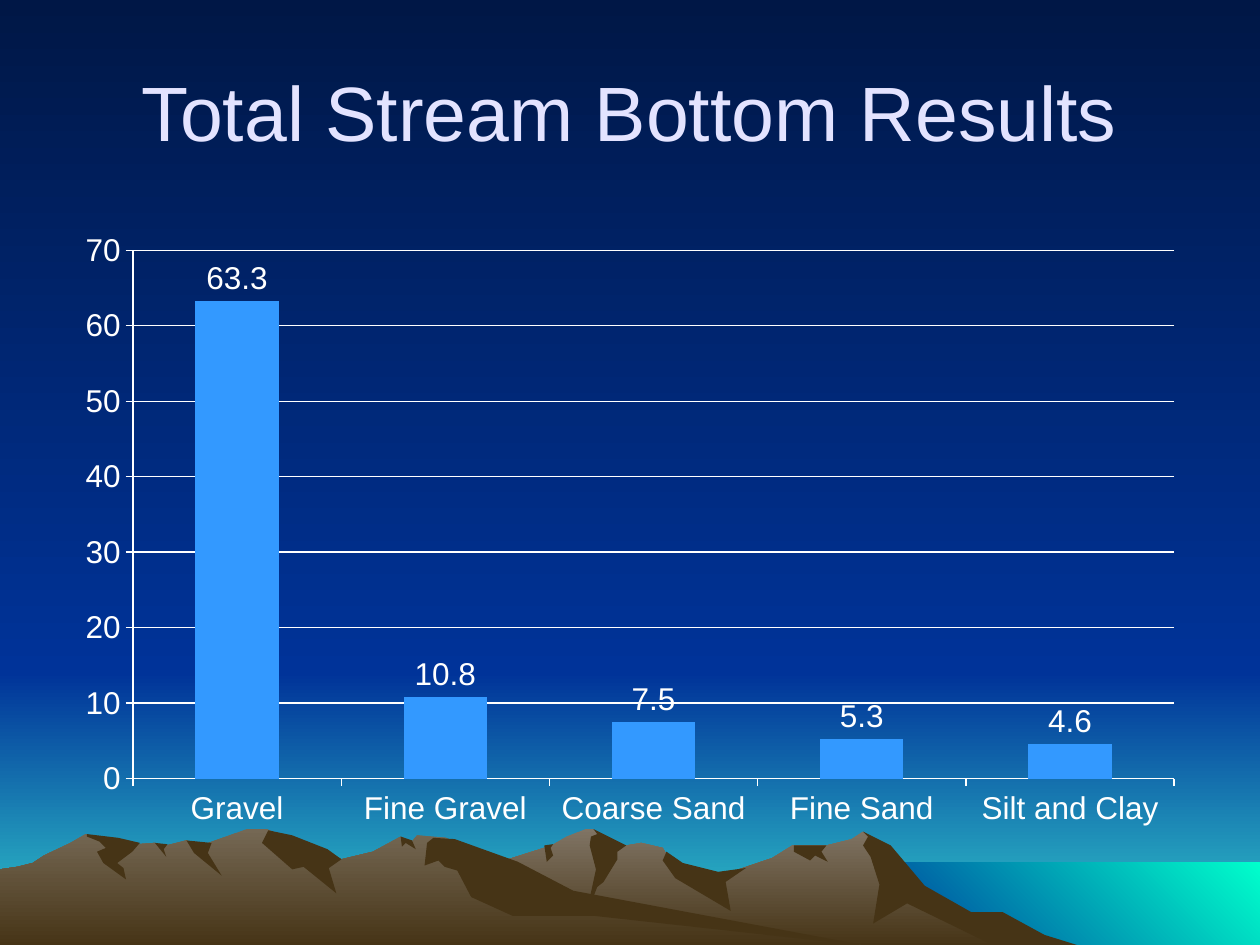
from lxml import etree
from pptx import Presentation
from pptx.chart.data import CategoryChartData
from pptx.dml.color import RGBColor
from pptx.enum.chart import XL_CHART_TYPE, XL_LABEL_POSITION, XL_TICK_MARK
from pptx.enum.shapes import MSO_SHAPE
from pptx.enum.text import MSO_ANCHOR, PP_ALIGN
from pptx.oxml.ns import qn
from pptx.util import Pt

RECTANGLE = MSO_SHAPE.RECTANGLE
COLUMNS = XL_CHART_TYPE.COLUMN_CLUSTERED
OUTSIDE_END = XL_LABEL_POSITION.OUTSIDE_END
TICK_OUTSIDE = XL_TICK_MARK.OUTSIDE
MIDDLE = MSO_ANCHOR.MIDDLE
CENTER = PP_ALIGN.CENTER

NIGHT = RGBColor(0x00, 0x17, 0x46)
BLUE = RGBColor(0x00, 0x33, 0x99)
TURQUOISE = RGBColor(0x33, 0xCC, 0xCC)
AQUA = RGBColor(0x00, 0xFF, 0xCC)
BROWN = RGBColor(0x46, 0x34, 0x16)
ROCK_RIGHT = RGBColor(0x80, 0x74, 0x64)
ROCK_LEFT = RGBColor(0x75, 0x68, 0x54)
LAVENDER = RGBColor(0xE3, 0xE3, 0xFF)
BAR_BLUE = RGBColor(0x33, 0x99, 0xFF)
WHITE = RGBColor(0xFF, 0xFF, 0xFF)

FONT = "Arial"
DOWN, UP_RIGHT = 270, 45  # gradient directions, in degrees

PAGE_WIDTH, PAGE_HEIGHT = 720, 540
HORIZON = 384
SEA_LEFT, SEA_TOP = 492, 493
MARGIN = 36
CONTENT_WIDTH = PAGE_WIDTH - 2 * MARGIN
CHART_TOP, CHART_HEIGHT = 126, 354
PLOT_LEFT, PLOT_TOP, PLOT_WIDTH, PLOT_HEIGHT = 76, 143, 595, 302

# Mountain points are (x, y) in hundredths of an inch.
MOUNTAIN_UNIT = Pt(0.72)
MOUNTAIN_FOOT = 751


def fill_gradient(fill, first, last, angle):
    fill.gradient()
    fill.gradient_angle = angle
    for stop, color in zip(fill.gradient_stops, (first, last)):
        stop.color.rgb = color


def add_mountain_face(shapes, points):
    """Add a closed outline without line or shadow and return its fill."""
    builder = shapes.build_freeform(*points[0], scale=MOUNTAIN_UNIT)
    builder.add_line_segments(points[1:], close=True)
    face = builder.convert_to_shape()
    face.shadow.inherit = False
    face.line.fill.background()
    return face.fill


deck = Presentation()
deck.slide_width, deck.slide_height = Pt(PAGE_WIDTH), Pt(PAGE_HEIGHT)
page = deck.slides.add_slide(deck.slide_layouts[5])
shapes = page.shapes
fill_gradient(page.background.fill, NIGHT, BLUE, DOWN)

# Sky and sea: each band reaches the right edge of the page
for left, top, bottom, first, last, angle in (
    (0, HORIZON, PAGE_HEIGHT, BLUE, TURQUOISE, DOWN),
    (0, 0, HORIZON, NIGHT, BLUE, DOWN),
    (SEA_LEFT, SEA_TOP, PAGE_HEIGHT, BLUE, AQUA, UP_RIGHT),
):
    band = shapes.add_shape(
        RECTANGLE, Pt(left), Pt(top), Pt(PAGE_WIDTH - left), Pt(bottom - top)
    )
    band.shadow.inherit = False
    band.line.fill.background()
    fill_gradient(band.fill, first, last, angle)

# Mountains: a skyline runs from left to right and is closed along the foot;
# the shadows are dark faces hanging from its peaks.
right_skyline = [
    (277, 739), (327, 709), (394, 685), (438, 671), (450, 664), (465, 658),
    (471, 658), (486, 673), (509, 669), (526, 673), (536, 690), (566, 697),
    (613, 681), (629, 671), (656, 671), (676, 666), (685, 660), (702, 671),
    (723, 698), (764, 723), (778, 727), (802, 740),
]
right_shadows = {
    "east slope": [
        (685, 660), (707, 671), (734, 703), (771, 724), (796, 724), (829, 742),
        (858, 751), (792, 752), (720, 717), (693, 733), (698, 702), (691, 680),
        (685, 671), (689, 664)],
    "middle peak": [
        (471, 658), (497, 671), (490, 676), (490, 682), (479, 700), (474, 704),
        (465, 727), (473, 690), (468, 671), (469, 664), (474, 662)],
    "middle shoulder": [
        (529, 676), (542, 685), (570, 692), (592, 689), (576, 700), (580, 723),
        (536, 697), (526, 683)],
    "east notch": [
        (630, 671), (656, 671), (652, 676), (657, 684), (647, 679), (643, 683),
        (630, 676)],
    "west notch": [
        (432, 671), (439, 670), (437, 673), (439, 679), (434, 684)],
}
left_skyline = [
    (0, 690), (14, 688), (26, 685), (35, 679), (56, 669), (68, 662),
    (94, 671), (123, 669), (132, 671), (148, 667), (160, 671), (196, 658),
    (212, 658), (223, 663), (236, 681), (260, 676), (271, 682), (296, 676),
    (318, 664), (327, 668), (331, 663), (354, 665), (432, 712), (667, 748),
]
left_shadows = {
    "main peak": [
        (213, 659), (232, 663), (260, 674), (271, 682), (261, 689), (267, 709),
        (241, 688), (232, 690), (208, 669)],
    "long east slope": [
        (344, 665), (361, 666), (411, 684), (455, 707), (690, 751), (472, 727),
        (407, 727), (374, 712), (363, 691), (353, 688), (348, 683), (337, 687),
        (339, 669)],
    "east notch": [
        (318, 664), (327, 667), (330, 674), (322, 669), (319, 672)],
    "middle gully": [
        (148, 667), (168, 669), (165, 677), (176, 695), (154, 677)],
    "small notch": [
        (123, 669), (133, 670), (130, 674), (132, 680)],
    "west peak": [
        (69, 662), (94, 665), (111, 669), (105, 676), (93, 685), (98, 689),
        (100, 698), (82, 685), (77, 676), (84, 673), (79, 668), (69, 664)],
}
for skyline, foot_left, foot_right, rock, shadows in (
    (right_skyline, 258, 821, ROCK_RIGHT, right_shadows),
    (left_skyline, 0, 690, ROCK_LEFT, left_shadows),
):
    foot = [(foot_right, MOUNTAIN_FOOT), (foot_left, MOUNTAIN_FOOT)]
    fill_gradient(add_mountain_face(shapes, skyline + foot), rock, BROWN, DOWN)
    for points in shadows.values():
        shadow_fill = add_mountain_face(shapes, points)
        shadow_fill.solid()
        shadow_fill.fore_color.rgb = BROWN

# Title, brought in front of the landscape
title = shapes.title
shapes._spTree.append(title._element)
title.left, title.top = Pt(MARGIN), Pt(18)
title.width, title.height = Pt(CONTENT_WIDTH), Pt(90)
title.text_frame.vertical_anchor = MIDDLE
para = title.text_frame.paragraphs[0]
para.alignment = CENTER
span = para.add_run()
span.text = "Total Stream Bottom Results"
span.font.name = FONT
span.font.size = Pt(44)
span.font.color.rgb = LAVENDER

# Chart
data = CategoryChartData(number_format="0.0")
data.categories = ["Gravel", "Fine Gravel", "Coarse Sand", "Fine Sand", "Silt and Clay"]
data.add_series("Series 1", (63.3, 10.8, 7.5, 5.3, 4.6))
chart = shapes.add_chart(
    COLUMNS, Pt(MARGIN), Pt(CHART_TOP), Pt(CONTENT_WIDTH), Pt(CHART_HEIGHT), data
).chart
chart.has_title = chart.has_legend = False
chart.font.name = FONT
chart.font.size = Pt(18)
chart.font.color.rgb = WHITE

value_axis = chart.value_axis
value_axis.minimum_scale, value_axis.maximum_scale = 0, 70
value_axis.major_unit = 10
value_axis.has_major_gridlines = True
value_axis.tick_labels.number_format = "0"
value_axis.tick_labels.number_format_is_linked = False
for axis in (chart.category_axis, value_axis):
    axis.major_tick_mark = TICK_OUTSIDE
for lined in (chart.category_axis, value_axis, value_axis.major_gridlines):
    lined.format.line.color.rgb = WHITE
    lined.format.line.width = Pt(0.75)

plot = chart.plots[0]
plot.gap_width = 150
plot.vary_by_categories = False
plot.has_data_labels = True
plot.data_labels.show_value = True
plot.data_labels.position = OUTSIDE_END
bars = plot.series[0].format.fill
bars.solid()
bars.fore_color.rgb = BAR_BLUE

# The inner plot area is placed by fractions of the chart's size
plot_area = chart._chartSpace.chart.plotArea
for old_layout in plot_area.findall(qn("c:layout")):
    plot_area.remove(old_layout)
layout = etree.Element(qn("c:layout"))
plot_area.insert(0, layout)
manual = etree.SubElement(layout, qn("c:manualLayout"))
for tag, value in (
    ("layoutTarget", "inner"), ("xMode", "edge"), ("yMode", "edge"),
    ("x", (PLOT_LEFT - MARGIN) / CONTENT_WIDTH),
    ("y", (PLOT_TOP - CHART_TOP) / CHART_HEIGHT),
    ("w", PLOT_WIDTH / CONTENT_WIDTH), ("h", PLOT_HEIGHT / CHART_HEIGHT),
):
    etree.SubElement(manual, qn("c:" + tag)).set("val", str(value))

deck.save("out.pptx")
